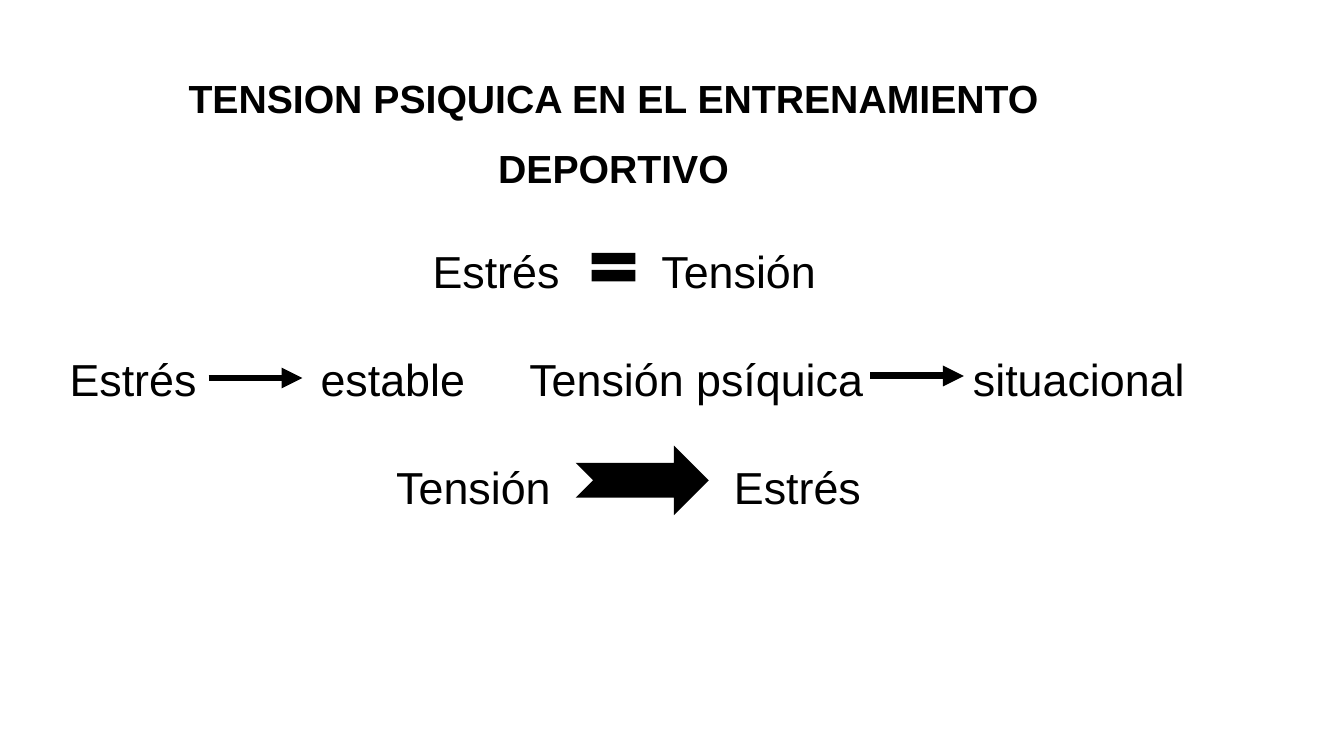
"""Build the slide on psychic tension in sports training."""
import lxml.etree
import pptx
import pptx.dml.color
import pptx.enum.shapes
import pptx.enum.text
import pptx.oxml.ns
import pptx.util

Inches = pptx.util.Inches
Pt = pptx.util.Pt
Shapes = pptx.enum.shapes.MSO_SHAPE
COLOURS = {"ink": "000000", "paper": "FFFFFF"}
TITLE_FONT = {"name": "Arial", "size": Pt(28), "bold": True}
WORD_FONT = {"name": "Arial", "size": Pt(32), "bold": False}
ROW_TOP, ROW_STEP, ROW_HEIGHT = 2.42, 1.07, 0.51
ROWS = [
    [("Estrés", 4.29, 1.4), ("Tensión", 6.56, 1.7)],
    [("Estrés", 0.69, 1.4), ("estable", 3.18, 1.6),
     ("Tensión psíquica", 5.25, 3.5), ("situacional", 9.65, 2.3)],
    [("Tensión", 3.93, 1.7), ("Estrés", 7.28, 1.4)],
]
ARROWS = [(2.07, 3.75), (8.63, 3.73)]
ARROW_LENGTH = 0.93
SYMBOLS = [
    (Shapes.MATH_EQUAL, (5.79, 2.41, 0.59, 0.48)),
    (Shapes.NOTCHED_RIGHT_ARROW, (5.71, 4.42, 1.32, 0.69)),
]


def colour(name):
    return pptx.dml.color.RGBColor.from_string(COLOURS[name])


def place(shape, *bounds):
    for side, value in zip(("left", "top", "width", "height"), bounds):
        setattr(shape, side, Inches(value))


def write(paragraph, text, font):
    span = paragraph.add_run()
    span.text = text
    for key, value in font.items():
        setattr(span.font, key, value)
    span.font.color.rgb = colour("ink")


def add_title(page, text):
    title = page.shapes.title
    place(title, 0.81, 0.45, 10.55, 1.68)
    frame = title.text_frame
    frame.word_wrap = True
    frame.auto_size = pptx.enum.text.MSO_AUTO_SIZE.NONE
    frame.vertical_anchor = pptx.enum.text.MSO_ANCHOR.TOP
    paragraph = frame.paragraphs[0]
    paragraph.alignment = pptx.enum.text.PP_ALIGN.CENTER
    paragraph.line_spacing = 1.5
    paragraph.space_before = Pt(0)
    write(paragraph, text, TITLE_FONT)


def add_word(page, text, left, top, width):
    bounds = [Inches(value) for value in (left, top, width, ROW_HEIGHT)]
    frame = page.shapes.add_textbox(*bounds).text_frame
    frame.word_wrap = True
    for side in ("left", "top", "right", "bottom"):
        setattr(frame, f"margin_{side}", 0)
    write(frame.paragraphs[0], text, WORD_FONT)


def add_symbol(page, preset, bounds):
    symbol = page.shapes.add_shape(preset, *[Inches(value) for value in bounds])
    symbol.shadow.inherit = False
    symbol.fill.solid()
    symbol.fill.fore_color.rgb = colour("ink")
    symbol.line.fill.background()


def add_arrow(page, left, top):
    arrow = page.shapes.add_connector(
        pptx.enum.shapes.MSO_CONNECTOR.STRAIGHT,
        Inches(left), Inches(top), Inches(left + ARROW_LENGTH), Inches(top))
    arrow.line.color.rgb = colour("ink")
    arrow.line.width = Pt(5)
    qualified = pptx.oxml.ns.qn
    properties = arrow._element.spPr
    outline = properties.find(qualified("a:ln"))
    lxml.etree.SubElement(outline, qualified("a:tailEnd"), type="triangle")
    lxml.etree.SubElement(properties, qualified("a:effectLst"))


def main():
    deck = pptx.Presentation()
    deck.slide_width, deck.slide_height = Inches(13.33), Inches(7.5)
    page = deck.slides.add_slide(deck.slide_layouts[5])
    page.background.fill.solid()
    page.background.fill.fore_color.rgb = colour("paper")
    add_title(page, "TENSION PSIQUICA EN EL ENTRENAMIENTO DEPORTIVO")
    for index, row in enumerate(ROWS):
        for text, left, width in row:
            add_word(page, text, left, ROW_TOP + index * ROW_STEP, width)
    for preset, bounds in SYMBOLS:
        add_symbol(page, preset, bounds)
    for left, top in ARROWS:
        add_arrow(page, left, top)
    deck.save("out.pptx")


if __name__ == "__main__":
    main()
